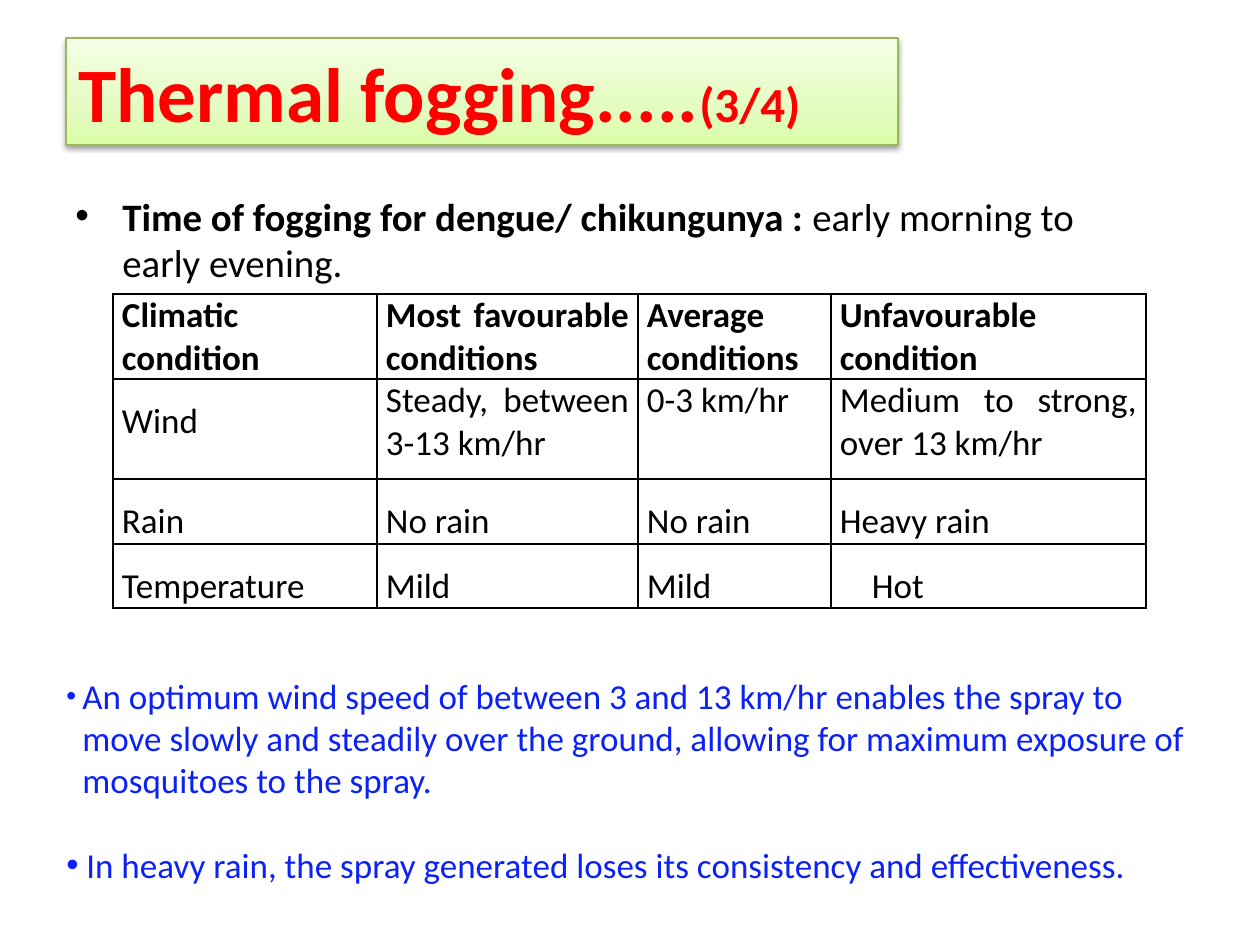
from dataclasses import dataclass

import pptx
import pptx.dml.color
import pptx.enum.shapes
import pptx.enum.text
import pptx.oxml
import pptx.oxml.ns
import pptx.util
from lxml import etree

ALIGN = pptx.enum.text.PP_ALIGN
ANCHOR = pptx.enum.text.MSO_ANCHOR
NS = pptx.oxml.ns.nsdecls("a")
FONT = "Calibri"
COLORS = {
    "title": "FF0000", "body": "000000", "note": "0B21F5",
    "low": "DAFDA7", "mid": "E4FCC2", "high": "F5FFE7", "edge": "98B955",
}


@dataclass
class Run:
    text: str
    size: float
    color: str = "body"
    bold: bool = False


@dataclass
class Cell:
    lines: tuple[str, ...]
    bold: bool = False
    spacing: float = 1.0
    indent: int = 0


def px(n: int) -> int:
    return round(n * 914400 / 126)


def rgb(name: str) -> pptx.dml.color.RGBColor:
    return pptx.dml.color.RGBColor.from_string(COLORS[name])


def add_run(p, run: Run) -> None:
    r = p.add_run()
    r.text = run.text
    r.font.name = FONT
    r.font.size = pptx.util.Pt(run.size)
    r.font.bold = run.bold
    r.font.color.rgb = rgb(run.color)


def set_indent(p, left: int, hanging: int = 0) -> None:
    pPr = p._p.get_or_add_pPr()
    pPr.set("marL", str(px(left)))
    pPr.set("indent", str(-px(hanging)))


def add_bullet(p, indent: int, percent: int = 100) -> None:
    set_indent(p, indent, indent)
    pPr = p._p.get_or_add_pPr()
    for xml in (f'<a:buSzPct {NS} val="{percent * 1000}"/>',
                f'<a:buFont {NS} typeface="Arial"/>',
                f'<a:buChar {NS} char="•"/>'):
        pPr.append(pptx.oxml.parse_xml(xml))


def add_text(s, x: int, y: int, w: int, h: int, anchor):
    sp = s.shapes.add_textbox(px(x), px(y), px(w), px(h))
    tf = sp.text_frame
    tf.word_wrap = True
    tf.vertical_anchor = anchor
    return tf


def add_title(s, runs: list[Run]) -> None:
    sp = s.shapes.add_shape(pptx.enum.shapes.MSO_SHAPE.RECTANGLE,
                            px(66), px(38), px(832), px(107))
    sp.fill.gradient()
    sp.fill.gradient_angle = 90
    stops = sp._element.spPr.find(".//" + pptx.oxml.ns.qn("a:gsLst"))
    for gs in list(stops):
        stops.remove(gs)
    for pos, name in ((0, "low"), (35, "mid"), (100, "high")):
        stops.append(pptx.oxml.parse_xml(
            f'<a:gs {NS} pos="{pos * 1000}"><a:srgbClr val="{COLORS[name]}"/></a:gs>'))
    sp.line.color.rgb = rgb("edge")
    sp.line.width = pptx.util.Pt(0.75)
    sp.shadow.inherit = False
    effects = sp._element.spPr.find(pptx.oxml.ns.qn("a:effectLst"))
    effects.append(pptx.oxml.parse_xml(
        f'<a:outerShdw {NS} blurRad="{pptx.util.Pt(3.1)}" dist="{pptx.util.Pt(1.6)}"'
        ' dir="5400000" rotWithShape="0"><a:srgbClr val="000000">'
        '<a:alpha val="38000"/></a:srgbClr></a:outerShdw>'))
    tf = sp.text_frame
    tf.word_wrap = True
    tf.vertical_anchor = ANCHOR.MIDDLE
    p = tf.paragraphs[0]
    p.alignment = ALIGN.LEFT
    for run in runs:
        add_run(p, run)


def fill_cell(tc, cell: Cell) -> None:
    tc.margin_left = tc.margin_right = px(9)
    tc.margin_top = tc.margin_bottom = 0
    tcPr = tc._tc.get_or_add_tcPr()
    for side in ("lnL", "lnR", "lnT", "lnB"):
        ln = etree.SubElement(tcPr, pptx.oxml.ns.qn(f"a:{side}"), w=str(pptx.util.Pt(1)))
        fill = etree.SubElement(ln, pptx.oxml.ns.qn("a:solidFill"))
        etree.SubElement(fill, pptx.oxml.ns.qn("a:srgbClr"), val=COLORS["body"])
    tc.fill.background()
    tf = tc.text_frame
    for i, line in enumerate(cell.lines):
        p = tf.add_paragraph() if i else tf.paragraphs[0]
        p.alignment = ALIGN.JUSTIFY
        p.line_spacing = cell.spacing
        if cell.indent:
            set_indent(p, cell.indent)
        add_run(p, Run(line, 20, bold=cell.bold))


def add_table(s, x: int, y: int, cols: list[int], rows: list[int],
              cells: list[list[Cell]]) -> None:
    table = s.shapes.add_table(len(rows), len(cols), px(x), px(y),
                               px(sum(cols)), px(sum(rows))).table
    table.first_row = table.horz_banding = False
    for col, width in zip(table.columns, cols):
        col.width = px(width)
    for row, height, line in zip(table.rows, rows, cells):
        row.height = px(height)
        for tc, cell in zip(row.cells, line):
            fill_cell(tc, cell)


def head(*lines: str) -> Cell:
    return Cell(lines, bold=True)


def loose(text: str, indent: int = 0) -> Cell:
    return Cell((text,), spacing=1.5, indent=indent)


def main() -> None:
    prs = pptx.Presentation()
    prs.slide_width, prs.slide_height = px(1260), px(945)
    s = prs.slides.add_slide(prs.slide_layouts[6])

    add_title(s, [Run("Thermal fogging.....", 44, "title", True),
                  Run("(3/4)", 28, "title", True)])

    tf = add_text(s, 63, 186, 1102, 95, ANCHOR.TOP)
    p = tf.paragraphs[0]
    add_bullet(p, 47)
    add_run(p, Run("Time of fogging for dengue/ chikungunya : ", 22.2, bold=True))
    add_run(p, Run("early morning to early evening.", 22.2))

    add_table(s, 113, 294, [264, 261, 193, 315], [85, 100, 65, 64], [
        [head("Climatic", "condition"), head("Most favourable conditions"),
         head("Average", "conditions"), head("Unfavourable", "condition")],
        [loose("Wind"), Cell(("Steady, between 3-13 km/hr",)),
         Cell(("0-3 km/hr",)), Cell(("Medium to strong, over 13 km/hr",))],
        [loose("Rain"), loose("No rain"), loose("No rain"), loose("Heavy rain")],
        [loose("Temperature"), loose("Mild"), loose("Mild"), loose("Hot", 32)],
    ])

    tf = add_text(s, 54, 668, 1160, 224, ANCHOR.MIDDLE)
    notes = [
        ("An optimum wind speed of between 3 and 13 km/hr enables the spray to "
         "move slowly and steadily over the ground, allowing for maximum exposure of "
         "mosquitoes to the spray.", 16, 80),
        ("In heavy rain, the spray generated loses its consistency and effectiveness.",
         20, 100),
    ]
    for i, (text, indent, percent) in enumerate(notes):
        p = tf.add_paragraph() if i else tf.paragraphs[0]
        if i:
            p.space_before = pptx.util.Pt(24)
        add_bullet(p, indent, percent)
        add_run(p, Run(text, 20, "note"))

    prs.save("out.pptx")


if __name__ == "__main__":
    main()
